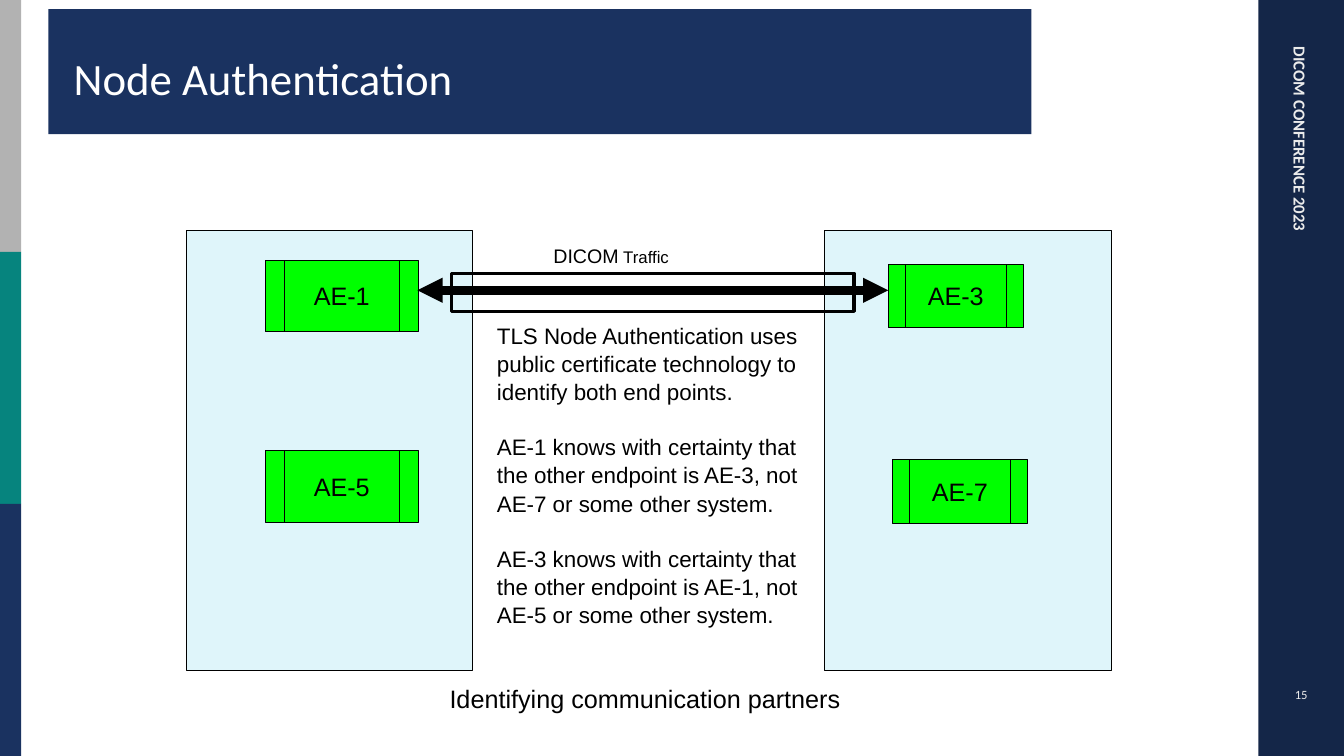
import pptx
import pptx.dml.color
import pptx.enum.shapes
import pptx.enum.text
import pptx.oxml.ns
import pptx.util
from lxml import etree

Inches, Pt = pptx.util.Inches, pptx.util.Pt
SHAPE = pptx.enum.shapes.MSO_SHAPE
ALIGN = pptx.enum.text.PP_ALIGN
ANCHOR = pptx.enum.text.MSO_ANCHOR
qn = pptx.oxml.ns.qn

NAVY, PALE, BLACK = "1A3260", "EBEBEB", "000000"
TITLE = "Node Authentication"
CONFERENCE = "DICOM CONFERENCE 2023"
PAGE = "15"
CAPTION = "Identifying communication partners"
TRAFFIC = [("DICOM", 14), (" Traffic", 12)]
EXPLANATION = [
    "TLS Node Authentication uses public certificate technology to identify both end points.",
    "AE-1 knows with certainty that the other endpoint is AE-3, not AE-7 or some other system.",
    "AE-3 knows with certainty that the other endpoint is AE-1, not AE-5 or some other system.",
]
LEFT_STRIPES = ["B2B2B2", "06847E", NAVY]
BANNERS = [(0.48, 0.09, 9.75, 1.24), (0.65, 0.6, 9.45, 0.66)]
SYSTEM_LEFTS = [1.85, 8.18]
ENTITIES = [
    ("AE-1", (2.63, 2.58, 1.52, 0.71)),
    ("AE-5", (2.63, 4.47, 1.52, 0.71)),
    ("AE-7", (8.85, 4.56, 1.34, 0.63)),
    ("AE-3", (8.81, 2.62, 1.34, 0.63)),
]


def rgb(value):
    return pptx.dml.color.RGBColor.from_string(value)


def style(p, size, color=BLACK, name="Arial", bold=False):
    p.font.size, p.font.name, p.font.bold = Pt(size), name, bold
    p.font.color.rgb = rgb(color)


def add_box(s, box, fill=None, line=None, width=0.75, kind=SHAPE.RECTANGLE):
    sp = s.shapes.add_shape(kind, *map(Inches, box))
    sp.shadow.inherit = False
    if fill:
        sp.fill.solid()
        sp.fill.fore_color.rgb = rgb(fill)
    else:
        sp.fill.background()
    if line:
        sp.line.color.rgb = rgb(line)
        sp.line.width = Pt(width)
    else:
        sp.line.fill.background()
    return sp


def add_text(s, box, text, size, wrap=False, **font):
    sp = s.shapes.add_textbox(*map(Inches, box))
    sp.text_frame.word_wrap = wrap
    p = sp.text_frame.paragraphs[0]
    p.text = text
    style(p, size, **font)
    return sp


def add_double_arrow(s, x1, x2, y):
    line = s.shapes.add_connector(pptx.enum.shapes.MSO_CONNECTOR.STRAIGHT,
                                  Inches(x1), Inches(y), Inches(x2), Inches(y))
    line.line.color.rgb = rgb(BLACK)
    line.line.width = Pt(6)
    for end in ("a:headEnd", "a:tailEnd"):
        etree.SubElement(line.line._get_or_add_ln(), qn(end), type="triangle")
    etree.SubElement(line.element.spPr, qn("a:effectLst"))


def add_frame(s):
    add_box(s, (12.48, 0, 0.85, 7.5), "142648")
    sp = add_text(s, (10.62, 2.49, 4.55, 0.3), CONFERENCE, 12, True,
                  color=PALE, name="Calibri", bold=True)
    sp.rotation = 90
    for i, color in enumerate(LEFT_STRIPES):
        add_box(s, (0, 2.5 * i, 0.21, 2.5), color)
    for box in BANNERS:
        add_box(s, box, NAVY)
    sp = add_text(s, (12.48, 6.69, 0.85, 0.4), PAGE, 9, True, color=PALE, name="Calibri")
    sp.text_frame.vertical_anchor = ANCHOR.MIDDLE
    sp.text_frame.paragraphs[0].alignment = ALIGN.CENTER


def add_title(s):
    title = s.shapes.title
    title.left, title.top, title.width, title.height = map(Inches, (0.63, 0.23, 9.47, 0.86))
    s.shapes.element.append(title.element)  # bring in front of the banner
    tf = title.text_frame
    tf.text = TITLE
    tf.vertical_anchor = ANCHOR.BOTTOM
    tf.paragraphs[0].alignment = ALIGN.LEFT
    style(tf.paragraphs[0], 32, "FFFFFF", "Calibri")


def add_diagram(s):
    for left in SYSTEM_LEFTS:
        add_box(s, (left, 2.29, 2.84, 4.36), "DFF5FA", BLACK)
    for name, box in ENTITIES:
        sp = add_box(s, box, "00FF00", BLACK, kind=SHAPE.FLOWCHART_PREDEFINED_PROCESS)
        tf = sp.text_frame
        tf.text = name
        tf.word_wrap = False
        tf.vertical_anchor = ANCHOR.MIDDLE
        tf.paragraphs[0].alignment = ALIGN.CENTER
        style(tf.paragraphs[0], 18)
    add_double_arrow(s, 4.14, 8.81, 2.88)
    add_box(s, (4.48, 2.71, 3.99, 0.38), line=BLACK, width=2.25)


def add_labels(s):
    p = add_text(s, (5.39, 2.37, 1.36, 0.34), "", 14).text_frame.paragraphs[0]
    for text, size in TRAFFIC:
        r = p.add_run()
        r.text = text
        r.font.size = Pt(size)
    add_text(s, (4.36, 6.73, 4.11, 0.4), CAPTION, 18)
    sp = add_text(s, (4.83, 3.13, 3.19, 3.87), "\n".join(EXPLANATION), 16, True)
    tf = sp.text_frame
    tf.text = "\n".join(EXPLANATION)
    for i, p in enumerate(tf.paragraphs):
        style(p, 16)
        p.line_spacing = 1.05
        p.space_before = Pt(19.3 if i else 0)


def main():
    prs = pptx.Presentation()
    prs.slide_width, prs.slide_height = Inches(13.33), Inches(7.5)
    s = prs.slides.add_slide(prs.slide_layouts[5])
    add_frame(s)
    add_title(s)
    add_diagram(s)
    add_labels(s)
    prs.save("out.pptx")


if __name__ == "__main__":
    main()
